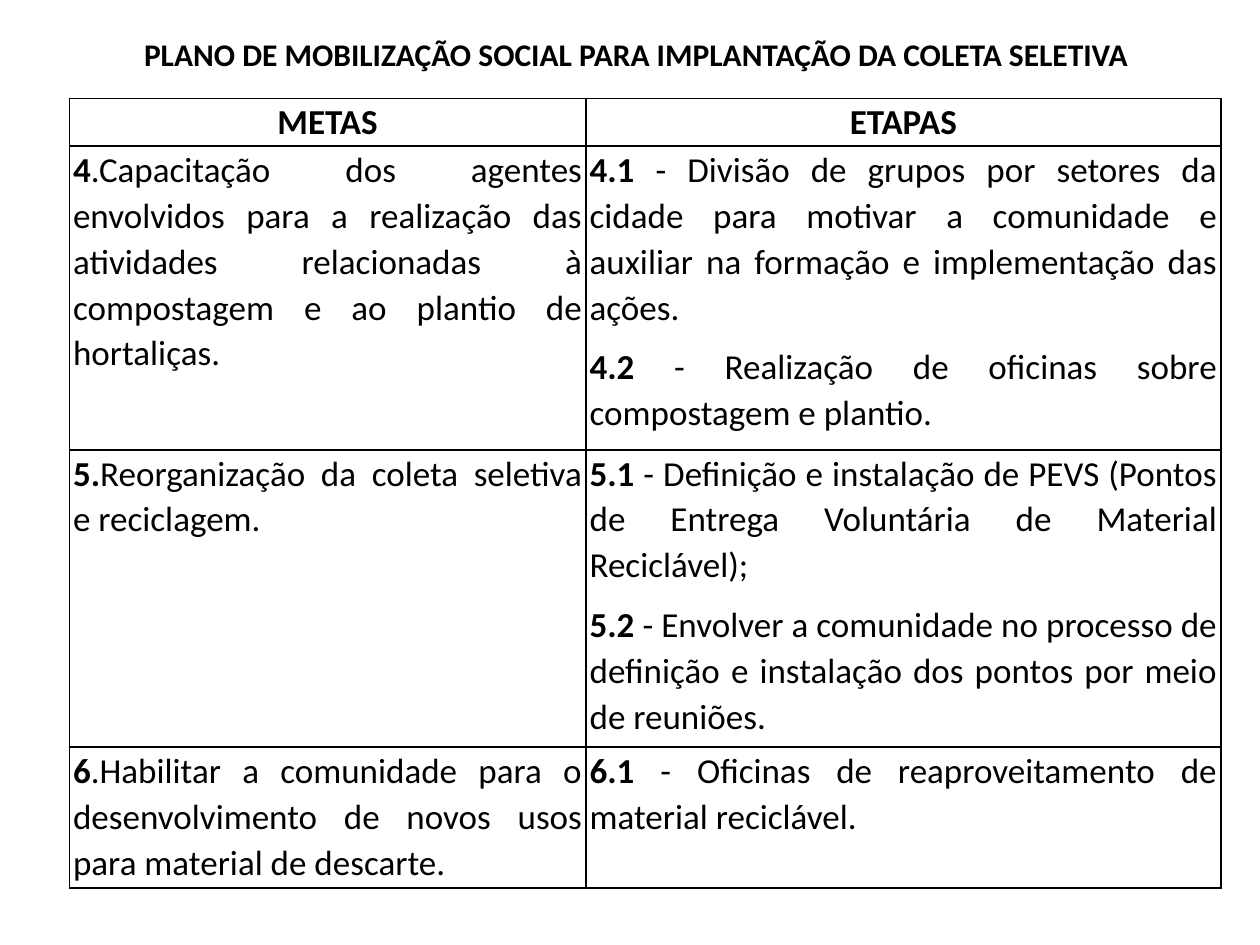
from dataclasses import dataclass

from lxml.etree import SubElement
from pptx import Presentation
from pptx.dml.color import RGBColor
from pptx.enum.text import MSO_ANCHOR, PP_ALIGN as Align
from pptx.oxml.ns import qn
from pptx.util import Inches, Pt


@dataclass(frozen=True)
class Theme:
    face: str = "Calibri"
    ink: str = "000000"
    paper: str = "FFFFFF"
    title: int = 18
    body: int = 20
    rule: int = 1


theme = Theme()


def write(para, runs, size, align):
    """Fill a paragraph with (text, bold) runs in the theme's type."""
    para.alignment = align
    font = para.font
    font.name, font.size = theme.face, Pt(size)
    font.color.rgb = RGBColor.from_string(theme.ink)
    for text, bold in runs:
        run = para.add_run()
        run.text = text
        run.font.bold = bold


def frame(cell):
    """Draw a thin line on all four sides of a cell."""
    props = cell._tc.get_or_add_tcPr()
    for spot, side in enumerate(("lnL", "lnR", "lnT", "lnB")):
        line = props.makeelement(qn(f"a:{side}"), {"w": str(Pt(theme.rule))})
        fill = SubElement(line, qn("a:solidFill"))
        SubElement(fill, qn("a:srgbClr"), val=theme.ink)
        props.insert(spot, line)


prs = Presentation()
prs.slide_width, prs.slide_height = Inches(10), Inches(7.5)
slide = prs.slides.add_slide(prs.slide_layouts[5])

title = slide.shapes.title
title.left, title.top = Inches(0.55), Inches(0.23)
title.width, title.height = Inches(9), Inches(0.4)
title.text_frame.vertical_anchor = MSO_ANCHOR.MIDDLE
heading = "PLANO DE MOBILIZAÇÃO SOCIAL PARA IMPLANTAÇÃO DA COLETA SELETIVA"
write(title.text_frame.paragraphs[0], [(heading, True)], theme.title, Align.CENTER)

# Each cell lists its paragraphs as (bold lead, plain rest).
plan = [
    ([("METAS", "")], [("ETAPAS", "")]),
    (
        [("4", ".Capacitação dos agentes envolvidos para a realização das "
               "atividades relacionadas à compostagem e ao plantio de hortaliças.")],
        [("4.1", " - Divisão de grupos por setores da cidade para motivar a "
                 "comunidade e auxiliar na formação e implementação das ações."),
         ("4.2", " - Realização de oficinas sobre compostagem e plantio.")],
    ),
    (
        [("5.", "Reorganização da coleta seletiva e reciclagem.")],
        [("5.1", " - Definição e instalação de PEVS (Pontos de Entrega "
                 "Voluntária de Material Reciclável);"),
         ("5.2", " - Envolver a comunidade no processo de definição e "
                 "instalação dos pontos por meio de reuniões.")],
    ),
    (
        [("6", ".Habilitar a comunidade para o desenvolvimento de novos usos "
               "para material de descarte.")],
        [("6.1", " - Oficinas de reaproveitamento de material reciclável.")],
    ),
]
widths = [4.1, 5.04]
heights = [0.38, 2.41, 2.36, 1.12]

table = slide.shapes.add_table(
    len(heights), len(widths), Inches(0.55), Inches(0.78),
    Inches(sum(widths)), Inches(sum(heights))).table
table.first_row = table.horz_banding = False
for col, width in zip(table.columns, widths):
    col.width = Inches(width)
for row, height in zip(table.rows, heights):
    row.height = Inches(height)

for r, pair in enumerate(plan):
    align = Align.JUSTIFY if r else Align.CENTER
    for c, items in enumerate(pair):
        cell = table.cell(r, c)
        cell.margin_left = cell.margin_right = Inches(0.03)
        cell.margin_top = cell.margin_bottom = 0
        cell.fill.solid()
        cell.fill.fore_color.rgb = RGBColor.from_string(theme.paper)
        frame(cell)
        text = cell.text_frame
        for i, (lead, rest) in enumerate(items):
            para = text.add_paragraph() if i else text.paragraphs[0]
            runs = [(lead, True), (rest, False)] if rest else [(lead, True)]
            write(para, runs, theme.body, align)
            para.line_spacing = 1.07 if r else 1.06
            para.space_after = Pt(8 if c else 0)

prs.save("out.pptx")
